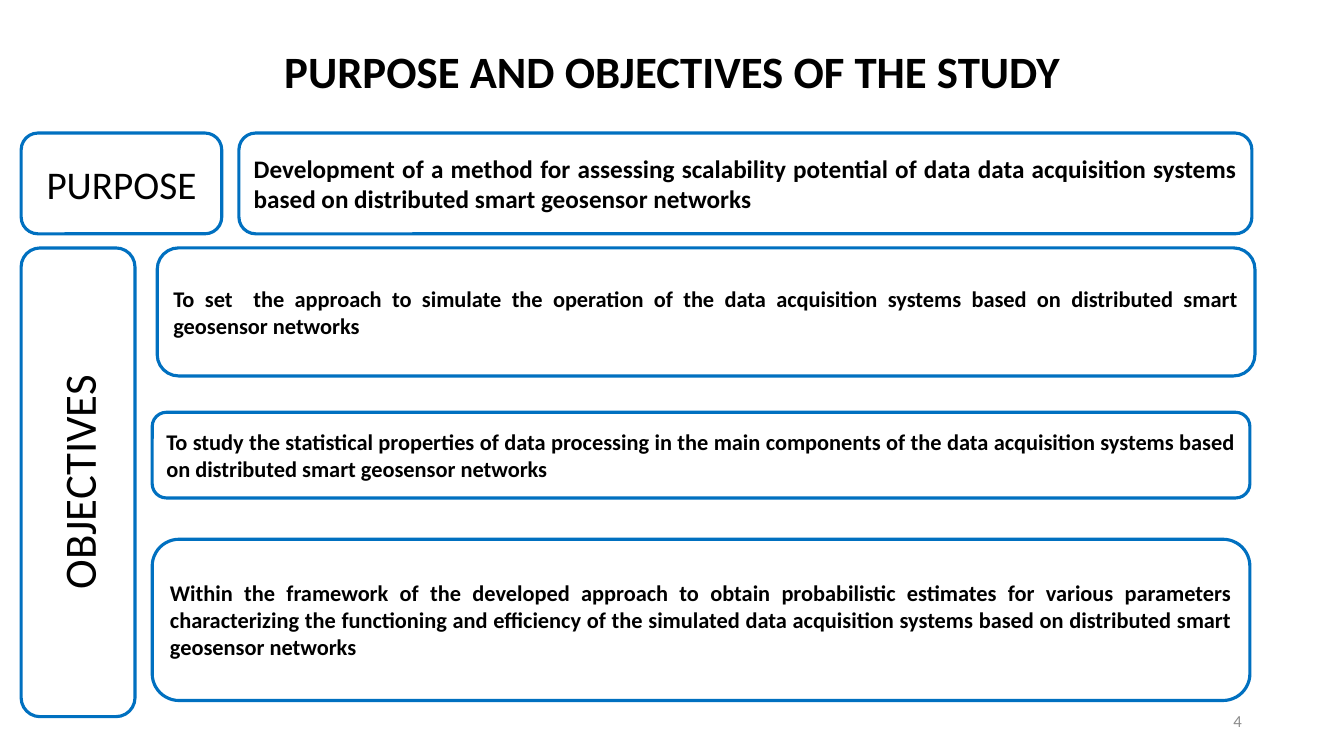
"""Build the slide on the purpose and objectives of the study."""
from pptx import Presentation
from pptx.dml.color import RGBColor
from pptx.enum.shapes import MSO_SHAPE
from pptx.enum.text import MSO_ANCHOR, MSO_AUTO_SIZE, PP_ALIGN
from pptx.util import Pt

COLORS = {"text": "000000", "fill": "FFFFFF", "border": "0070C0", "number": "8C8C8C"}
FRAME_FORMAT = {
    "word_wrap": True,
    "auto_size": MSO_AUTO_SIZE.NONE,
    "vertical_anchor": MSO_ANCHOR.MIDDLE,
}
LABEL_LEFT, PURPOSE_TOP, OBJECTIVES_TOP = 15.12, 95.04, 177.12
PURPOSE_HEIGHT, OBJECTIVE_WIDTH = 72, 784.08
PURPOSE = (
    "Development of a method for assessing scalability potential of data data "
    "acquisition systems based on distributed smart geosensor networks"
)
OBJECTIVES = [
    (112.32, OBJECTIVES_TOP, 91.44,
     "To set  the approach to simulate the operation of the data acquisition "
     "systems based on distributed smart geosensor networks"),
    (108.72, 294.48, 61.2,
     "To study the statistical properties of data processing in the main components "
     "of the data acquisition systems based on distributed smart geosensor networks"),
    (108.72, 385.2, 115.2,
     "Within the framework of the developed approach to obtain probabilistic estimates "
     "for various parameters characterizing the functioning and efficiency of the "
     "simulated data acquisition systems based on distributed smart geosensor networks"),
]


def color(name):
    """Return a named color of the slide."""
    return RGBColor.from_string(COLORS[name])


def write_text(shape, text, size, alignment, bold=False, color_name="text"):
    """Put one formatted paragraph into a shape."""
    frame = shape.text_frame
    for name, value in FRAME_FORMAT.items():
        setattr(frame, name, value)
    paragraph = frame.paragraphs[0]
    paragraph.alignment = alignment
    run = paragraph.add_run()
    run.text = text
    for name, value in {"name": "Calibri", "size": Pt(size), "bold": bold}.items():
        setattr(run.font, name, value)
    run.font.color.rgb = color(color_name)
    return paragraph


def add_title(slide, text):
    """Move and fill the title placeholder."""
    title = slide.shapes.title
    position = {"left": 66.24, "top": 28.8, "width": 828, "height": 48.24}
    for name, value in position.items():
        setattr(title, name, Pt(value))
    paragraph = write_text(title, text, 32, PP_ALIGN.CENTER, bold=True)
    paragraph.line_spacing = 0.9


def add_box(slide, box):
    """Add an empty outlined rounded box."""
    shape = slide.shapes.add_shape(MSO_SHAPE.ROUNDED_RECTANGLE, *map(Pt, box))
    shape.shadow.inherit = False
    shape.fill.solid()
    shape.fill.fore_color.rgb = color("fill")
    shape.line.color.rgb = color("border")
    shape.line.width = Pt(2.25)
    return shape


def add_statement(slide, box, text, size):
    """Add a box with a bold justified statement."""
    write_text(add_box(slide, box), text, size, PP_ALIGN.JUSTIFY, bold=True)


def add_label(slide, box, text, size, vertical=False):
    """Add a box with a centred heading, optionally reading upwards."""
    shape = add_box(slide, box)
    write_text(shape, text, size, PP_ALIGN.CENTER)
    if vertical:
        shape.text_frame._txBody.bodyPr.set("vert", "vert270")


def add_page_number(slide, text):
    """Add the page number at the lower right."""
    shape = slide.shapes.add_textbox(*map(Pt, (678.24, 500.4, 216, 28.8)))
    write_text(shape, text, 12, PP_ALIGN.RIGHT, color_name="number")


def main():
    """Build and save the presentation."""
    presentation = Presentation()
    presentation.slide_width, presentation.slide_height = Pt(960), Pt(540)
    slide = presentation.slides.add_slide(presentation.slide_layouts[5])
    add_title(slide, "PURPOSE AND OBJECTIVES OF THE STUDY")
    add_statement(slide, (170.64, PURPOSE_TOP, 723.6, PURPOSE_HEIGHT), PURPOSE, 18)
    for left, top, height, text in OBJECTIVES:
        add_statement(slide, (left, top, OBJECTIVE_WIDTH, height), text, 16)
    add_label(slide, (LABEL_LEFT, PURPOSE_TOP, 143.28, PURPOSE_HEIGHT), "PURPOSE", 28)
    add_label(slide, (LABEL_LEFT, OBJECTIVES_TOP, 81.36, 334.8), "OBJECTIVES", 32,
              vertical=True)
    add_page_number(slide, "4")
    presentation.save("out.pptx")


if __name__ == "__main__":
    main()
